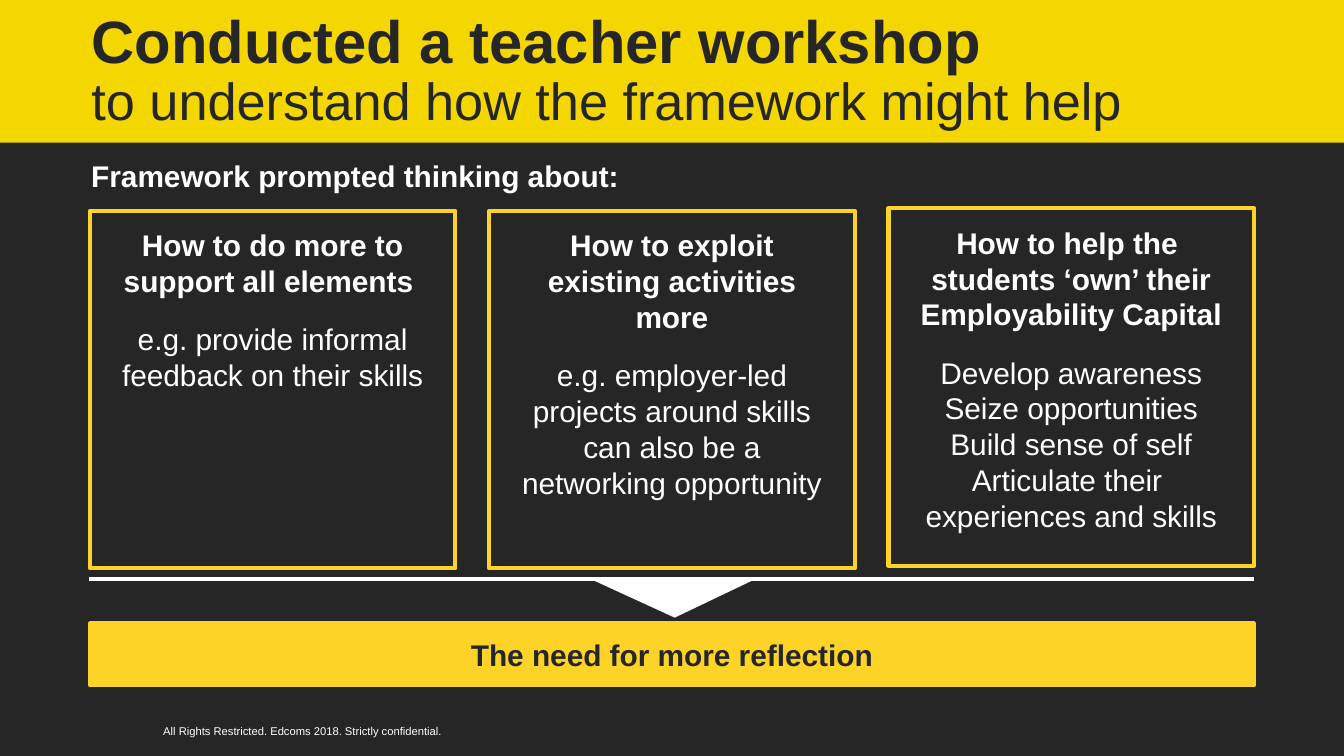
from dataclasses import dataclass

from pptx import Presentation
from pptx.dml.color import RGBColor
from pptx.enum import shapes, text
from pptx.oxml.ns import qn
from pptx import util as u
from lxml import etree


@dataclass
class Theme:
    dark: str = "262626"
    white: str = "FFFFFF"
    band: str = "F4D600"
    gold: str = "FED328"
    face: str = "Arial"
    head: float = 32
    sub: float = 28
    body: float = 16
    foot: float = 6
    rule: float = 2.25


class Deck:
    def __init__(self, theme, wide, high):
        self.theme = theme
        self.prs = Presentation()
        self.prs.slide_width, self.prs.slide_height = u.Pt(wide), u.Pt(high)
        self.slide = self.prs.slides.add_slide(self.prs.slide_layouts[6])
        self.paint(self.slide.background.fill, theme.dark)

    def paint(self, fill, color):
        if color:
            fill.solid()
            fill.fore_color.rgb = RGBColor.from_string(color)
        else:
            fill.background()

    def style(self, font, size, color, bold=False):
        font.name, font.size, font.bold = self.theme.face, u.Pt(size), bold
        font.color.rgb = RGBColor.from_string(color)

    def shape(self, kind, box, fill=None, line=None):
        shape = self.slide.shapes.add_shape(kind, *map(u.Pt, box))
        shape.shadow.inherit = False
        self.paint(shape.fill, fill)
        self.paint(shape.line.fill, line)
        if line:
            shape.line.width = u.Pt(self.theme.rule)
        return shape

    def rect(self, box, fill=None, line=None):
        return self.shape(shapes.MSO_SHAPE.RECTANGLE, box, fill, line)

    def frame(self, shape, pads=(7.2, 3.6, 7.2, 3.6), anchor=text.MSO_ANCHOR.MIDDLE):
        frame = shape.text_frame
        frame.word_wrap = True
        frame.vertical_anchor = anchor
        frame.margin_left, frame.margin_top, frame.margin_right, frame.margin_bottom = map(u.Pt, pads)
        return frame

    def label(self, box, pads=(7.2, 3.6, 7.2, 3.6)):
        return self.frame(self.slide.shapes.add_textbox(*map(u.Pt, box)), pads)

    def put(self, par, words, size, color, bold=False, align=text.PP_ALIGN.CENTER):
        par.text = words
        par.alignment = align
        self.style(par.font, size, color, bold)

    def card(self, box, head, body):
        t = self.theme
        frame = self.frame(self.rect(box, line=t.gold), (14.4, 8.64, 14.4, 3.6), text.MSO_ANCHOR.TOP)
        self.put(frame.paragraphs[0], head, t.body, t.white, True)
        par = frame.add_paragraph()
        par.space_before = u.Pt(12)
        self.put(par, body, t.body, t.white)

    def title(self, box, head, sub):
        t = self.theme
        par = self.label(box, (0, 0, 0, 0)).paragraphs[0]
        par.alignment = text.PP_ALIGN.LEFT
        par.line_spacing = u.Pt(29.4)
        run = par.add_run()
        run.text = head
        self.style(run.font, t.head, t.dark, True)
        par.add_line_break()
        run = par.add_run()
        run.text = sub
        self.style(run.font, t.sub, t.dark)

    def line(self, x1, y1, x2, y2):
        line = self.slide.shapes.add_connector(
            shapes.MSO_CONNECTOR.STRAIGHT, *map(u.Pt, (x1, y1, x2, y2)))
        self.paint(line.line.fill, self.theme.white)
        line.line.width = u.Pt(self.theme.rule)
        etree.SubElement(line._element.spPr, qn("a:effectLst"))

    def arrow(self, box):
        arrow = self.shape(shapes.MSO_SHAPE.ISOSCELES_TRIANGLE, box, self.theme.white)
        arrow.rotation = 180
        arrow.adjustments[0] = 0.49


CARDS = [
    (113, "How to do more to support all elements ",
     "e.g. provide informal feedback on their skills"),
    (113, "How to exploit existing activities more",
     "e.g. employer-led projects around skills can also be a networking opportunity"),
    (111.6, "How to help the \nstudents ‘own’ their Employability Capital",
     "Develop awareness\nSeize opportunities\nBuild sense of self\n"
     "Articulate their \nexperiences and skills"),
]


def main():
    t = Theme()
    deck = Deck(t, 720, 405)
    left, wide, step = 48.2, 195.8, 213.9

    foot = deck.label((-198, 382.3, 720, 18.7), (0, 0, 0, 0))
    deck.put(foot.paragraphs[0], "All Rights Restricted. Edcoms 2018. Strictly confidential.",
             t.foot, t.white)
    deck.rect((0, 0, 726, 76.4), t.band)
    lead = deck.label((41.8, 71.3, 333.4, 45.4))
    deck.put(lead.paragraphs[0], "Framework prompted thinking about:",
             t.body, t.white, True, text.PP_ALIGN.LEFT)

    for i, (top, head, body) in enumerate(CARDS):
        deck.card((left + i * step, top, wide, 191.5), head, body)

    need = deck.rect((left, 334, 2 * step + wide, 33.2), t.gold, t.gold)
    deck.put(deck.frame(need).paragraphs[0], "The need for more reflection",
             t.body, t.dark, True)
    deck.arrow((317.8, 310.9, 85.5, 20))
    deck.line(47.5, 310.3, 671.8, 310.3)
    deck.title((49, 26.6, 580, 28), "Conducted a teacher workshop",
               "to understand how the framework might help")
    deck.prs.save("out.pptx")


if __name__ == "__main__":
    main()
